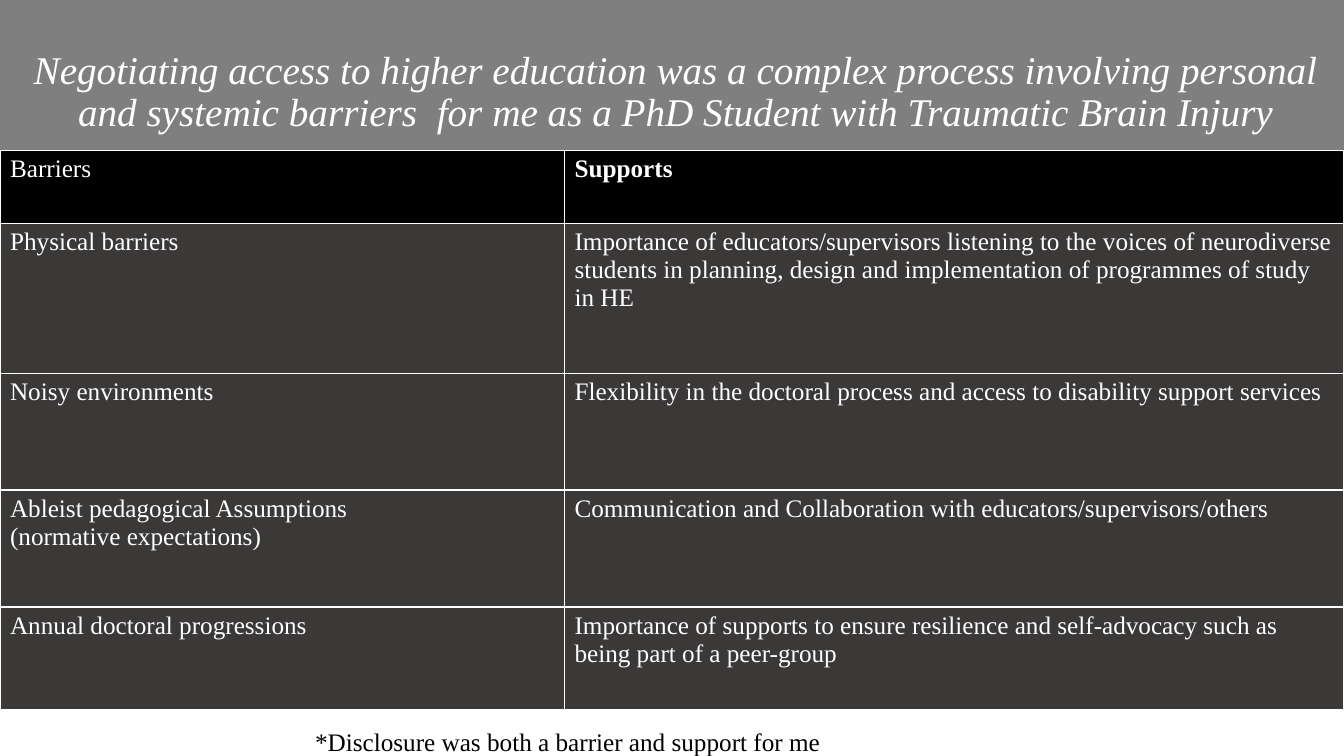
from lxml.etree import SubElement
from pptx import Presentation
from pptx.dml.color import RGBColor
from pptx.enum.text import MSO_ANCHOR, MSO_AUTO_SIZE, PP_ALIGN
from pptx.oxml.ns import qn
from pptx.util import Pt

COLORS = {"black": "000000", "white": "FFFFFF", "row": "3B3838"}
FONT = "Times New Roman"
TITLE_FORMAT = {"name": FONT, "size": Pt(28), "italic": True, "bold": False}
HEAD_FORMAT = {"name": FONT, "size": Pt(18), "bold": True}
BODY_FORMAT = {"name": FONT, "size": Pt(18), "bold": False}

TITLE = (
    "Negotiating access to higher education was a complex process involving personal "
    "and systemic barriers  for me as a PhD Student with Traumatic Brain Injury"
)
BARRIERS_AND_SUPPORTS = [
    ("Barriers", "Supports"),
    (
        "Physical barriers",
        "Importance of educators/supervisors listening to the voices of neurodiverse "
        "students in planning, design and implementation of programmes of study in HE",
    ),
    (
        "Noisy environments",
        "Flexibility in the doctoral process and access to disability support services",
    ),
    (
        "Ableist pedagogical Assumptions\n(normative expectations)",
        "Communication and Collaboration with educators/supervisors/others",
    ),
    (
        "Annual doctoral progressions",
        "Importance of supports to ensure resilience and self-advocacy such as "
        "being part of a peer-group",
    ),
]
DISCLOSURE = "*Disclosure was both a barrier and support for me"


def rgb(color):
    return RGBColor.from_string(COLORS[color])


def style_text(frame, formats, color):
    for paragraph in frame.paragraphs:
        for run in paragraph.runs:
            for attribute, value in formats.items():
                setattr(run.font, attribute, value)
            run.font.color.rgb = rgb(color)


def add_borders(cell, color, width):
    properties = cell._tc.get_or_add_tcPr()
    for side in ("lnL", "lnR", "lnT", "lnB"):
        line = SubElement(properties, qn(f"a:{side}"), w=str(Pt(width)))
        fill = SubElement(line, qn("a:solidFill"))
        SubElement(fill, qn("a:srgbClr"), val=COLORS[color])


def place_title(slide, left, top, width, height):
    title = slide.shapes.title
    box = {"left": left, "top": top, "width": width, "height": height}
    for attribute, value in box.items():
        setattr(title, attribute, Pt(value))
    title.fill.solid()
    title.fill.fore_color.rgb = rgb("black")
    shade = title._element.spPr.find(f"{qn('a:solidFill')}/{qn('a:srgbClr')}")
    SubElement(shade, qn("a:alpha"), val="50000")
    frame = title.text_frame
    frame.text = TITLE
    layout = {
        "word_wrap": True,
        "auto_size": MSO_AUTO_SIZE.NONE,
        "vertical_anchor": MSO_ANCHOR.MIDDLE,
    }
    for attribute, value in layout.items():
        setattr(frame, attribute, value)
    frame.paragraphs[0].alignment = PP_ALIGN.CENTER
    frame.paragraphs[0].line_spacing = 0.9
    style_text(frame, TITLE_FORMAT, "white")


def place_comparison(slide, left, top, width, row_heights):
    comparison = slide.shapes.add_table(
        len(BARRIERS_AND_SUPPORTS), 2,
        Pt(left), Pt(top), Pt(width), Pt(sum(row_heights)),
    ).table
    barriers_width = width * 0.42
    comparison.columns[0].width = Pt(barriers_width)
    comparison.columns[1].width = Pt(width - barriers_width)
    for row, (texts, height) in enumerate(zip(BARRIERS_AND_SUPPORTS, row_heights)):
        comparison.rows[row].height = Pt(height)
        for column, text in enumerate(texts):
            cell = comparison.cell(row, column)
            cell.text = text
            is_supports_head = row == 0 and column == 1
            style_text(
                cell.text_frame, HEAD_FORMAT if is_supports_head else BODY_FORMAT, "white"
            )
            add_borders(cell, "white", 1)
            cell.fill.solid()
            cell.fill.fore_color.rgb = rgb("row" if row else "black")


def place_disclosure(slide, left, top, width, height):
    disclosure = slide.shapes.add_textbox(Pt(left), Pt(top), Pt(width), Pt(height))
    frame = disclosure.text_frame
    frame.word_wrap = True
    frame.text = DISCLOSURE
    style_text(frame, BODY_FORMAT, "black")


def main():
    deck = Presentation()
    deck.slide_width, deck.slide_height = Pt(960), Pt(540)
    slide = deck.slides.add_slide(deck.slide_layouts[5])
    place_title(slide, -5, 0, 975, 133)
    place_comparison(slide, 0, 107.3, 960, [52.3, 107, 83.5, 83.5, 73.5])
    place_disclosure(slide, 218, 515.5, 464, 29)
    deck.save("out.pptx")


if __name__ == "__main__":
    main()
